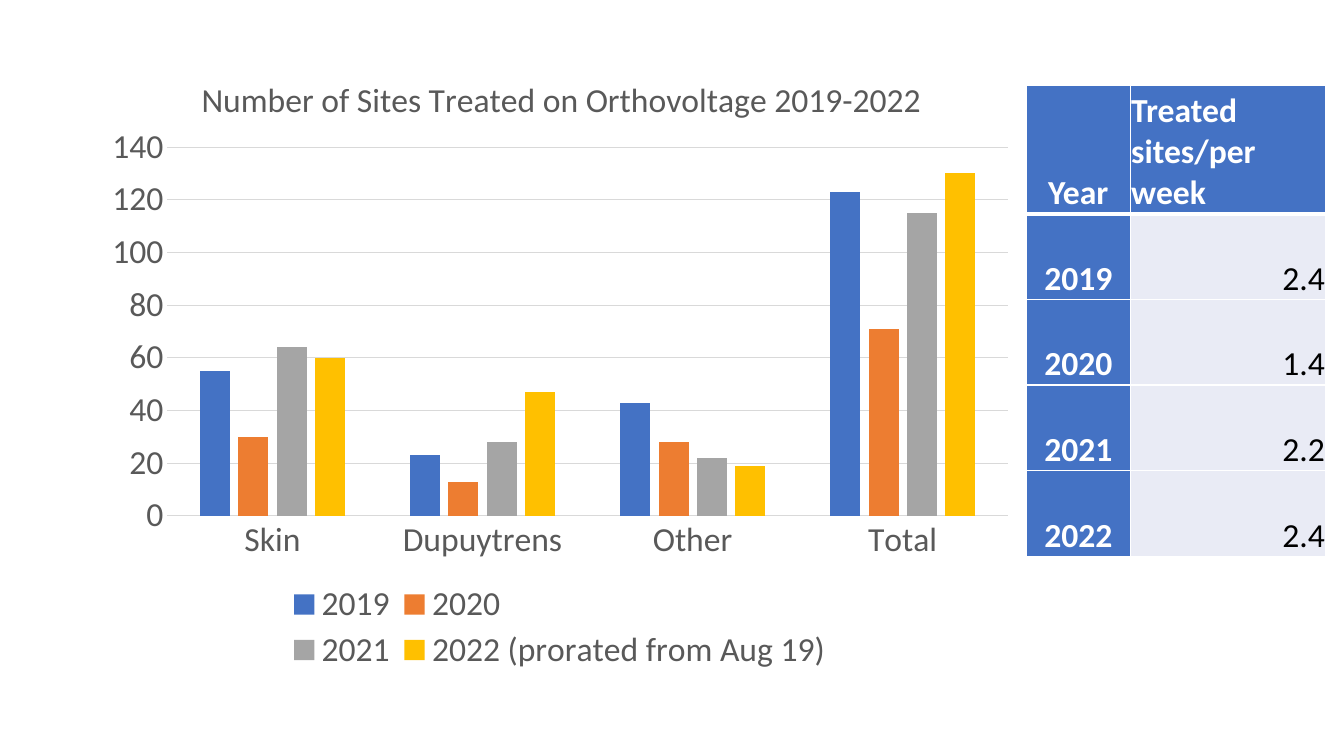
import pptx
import pptx.chart.data
import pptx.dml.color
import pptx.enum.chart
import pptx.enum.text
import pptx.oxml.ns
import pptx.util
from dataclasses import dataclass
from lxml import etree

CHART_TITLE = "Number of Sites Treated on Orthovoltage 2019-2022"
SITES = ["Skin", "Dupuytrens", "Other", "Total"]
TREATED = {
    "2019": (55, 30 - 7, 43, 123),
    "2020": (30, 13, 28, 71),
    "2021": (64, 28, 22, 115),
    "2022 (prorated from Aug 19)": (60, 47, 19, 130),
}
WEEKLY_RATES = [
    ("Year", "Treated sites/per week"),
    ("2019", "2.4"),
    ("2020", "1.4"),
    ("2021", "2.2"),
    ("2022", "2.4"),
]
TREATED["2019"] = (55, 23, 43, 123)

SLIDE_SIZE = (13.33, 7.5)
CHART_BOX = (0.92, 0.45, 9.26, 6.31)
TABLE_CORNER = (10.18, 0.85)
YEAR_WIDTH, RATE_WIDTH = 1.03, 1.94
HEADER_HEIGHT, ROW_HEIGHT = 1.27, 0.85
# Shares of the chart's width and height
TITLE_SPOT = {"x": 0.11, "y": 0.04}
PLOT_SPOT = {"x": 0.08, "y": 0.16, "w": 0.9, "h": 0.58}
LEGEND_SPOT = {"x": 0.2, "y": 0.84, "w": 0.6, "h": 0.15}


@dataclass(frozen=True)
class Theme:
    font: str = "Calibri"
    size: int = 24
    series: tuple = ("4472C4", "ED7D31", "A5A5A5", "FFC000")
    heading: str = "4472C4"
    body: str = "E9EBF5"
    light: str = "FFFFFF"
    dark: str = "000000"
    label: str = "595959"
    grid: str = "D9D9D9"
    hairline: float = 0.75
    border: int = 1
    header_border: int = 3


THEME = Theme()
ALIGN = pptx.enum.text.PP_ALIGN


def rgb(code):
    return pptx.dml.color.RGBColor.from_string(code)


def inches(lengths):
    return [pptx.util.Inches(length) for length in lengths]


def style_font(font, color, bold=False):
    font.name = THEME.font
    font.size = pptx.util.Pt(THEME.size)
    font.bold = bold
    font.color.rgb = rgb(color)


def write(frame, text, color, bold=False, align=None):
    paragraph = frame.paragraphs[0]
    paragraph.alignment = align
    run = paragraph.add_run()
    run.text = text
    style_font(run.font, color, bold)


def place(part, index, mode=None, **shares):
    """Give a chart part a manual layout, as its child number index."""
    tag = pptx.oxml.ns.qn
    for old in part.findall(tag("c:layout")):
        part.remove(old)
    layout = etree.Element(tag("c:layout"))
    manual = etree.SubElement(layout, tag("c:manualLayout"))
    settings = {"layoutTarget": mode} if mode else {}
    settings.update(xMode="edge", yMode="edge", **shares)
    for name, value in settings.items():
        etree.SubElement(manual, tag("c:" + name), val=str(value))
    part.insert(index, layout)


def set_borders(cell, **widths):
    tag = pptx.oxml.ns.qn
    properties = cell._tc.get_or_add_tcPr()
    for side in "LRTB":
        width = pptx.util.Pt(widths.get(side, THEME.border))
        edge = etree.SubElement(properties, tag("a:ln" + side), w=str(width))
        fill = etree.SubElement(edge, tag("a:solidFill"))
        etree.SubElement(fill, tag("a:srgbClr"), val=THEME.light)


def style_line(line):
    line.color.rgb = rgb(THEME.grid)
    line.width = pptx.util.Pt(THEME.hairline)


def add_sites_chart(slide):
    enums = pptx.enum.chart
    data = pptx.chart.data.CategoryChartData()
    data.categories = SITES
    for year, counts in TREATED.items():
        data.add_series(year, counts)
    chart = slide.shapes.add_chart(
        enums.XL_CHART_TYPE.COLUMN_CLUSTERED, *inches(CHART_BOX), data
    ).chart
    style_font(chart.font, THEME.label)

    write(chart.chart_title.text_frame, CHART_TITLE, THEME.label)
    chart.chart_title.include_in_layout = False
    chart.has_legend = True
    chart.legend.position = enums.XL_LEGEND_POSITION.BOTTOM
    chart.legend.include_in_layout = False
    style_font(chart.legend.font, THEME.label)

    bars = chart.plots[0]
    bars.gap_width, bars.overlap, bars.vary_by_categories = 219, -27, False
    for series, color in zip(bars.series, THEME.series):
        series.format.fill.solid()
        series.format.fill.fore_color.rgb = rgb(color)

    sites, counts = chart.category_axis, chart.value_axis
    for axis in (sites, counts):
        axis.major_tick_mark = axis.minor_tick_mark = enums.XL_TICK_MARK.NONE
        style_font(axis.tick_labels.font, THEME.label)
    style_line(sites.format.line)
    counts.format.line.fill.background()
    counts.minimum_scale, counts.maximum_scale, counts.major_unit = 0, 140, 20
    style_line(counts.major_gridlines.format.line)

    place(chart.chart_title._element, 1, **TITLE_SPOT)
    place(chart.legend._element, 1, **LEGEND_SPOT)
    place(chart._chartSpace.chart.plotArea, 0, "inner", **PLOT_SPOT)


def add_rates_table(slide):
    heights = [HEADER_HEIGHT] + [ROW_HEIGHT] * (len(WEEKLY_RATES) - 1)
    widths = (YEAR_WIDTH, RATE_WIDTH)
    rates = slide.shapes.add_table(
        len(heights), len(widths),
        *inches((*TABLE_CORNER, sum(widths), sum(heights)))
    ).table
    for column, width in zip(rates.columns, inches(widths)):
        column.width = width
    for row, height in zip(rates.rows, inches(heights)):
        row.height = height

    for r, record in enumerate(WEEKLY_RATES):
        for c, text in enumerate(record):
            cell = rates.cell(r, c)
            heading = r == 0 or c == 0
            cell.margin_left = cell.margin_right = pptx.util.Inches(0.01)
            cell.margin_top, cell.margin_bottom = inches((0.01, 0))
            cell.vertical_anchor = pptx.enum.text.MSO_ANCHOR.BOTTOM
            thick_edge = {0: "B", 1: "T"}.get(r)
            set_borders(cell, **({thick_edge: THEME.header_border} if thick_edge else {}))
            cell.fill.solid()
            cell.fill.fore_color.rgb = rgb(THEME.heading if heading else THEME.body)
            align = ALIGN.CENTER if c == 0 else ALIGN.LEFT if r == 0 else ALIGN.RIGHT
            write(cell.text_frame, text, THEME.light if heading else THEME.dark,
                  bold=heading, align=align)


def main():
    deck = pptx.Presentation()
    deck.slide_width, deck.slide_height = inches(SLIDE_SIZE)
    slide = deck.slides.add_slide(deck.slide_layouts[6])
    add_rates_table(slide)
    add_sites_chart(slide)
    deck.save("out.pptx")


if __name__ == "__main__":
    main()
